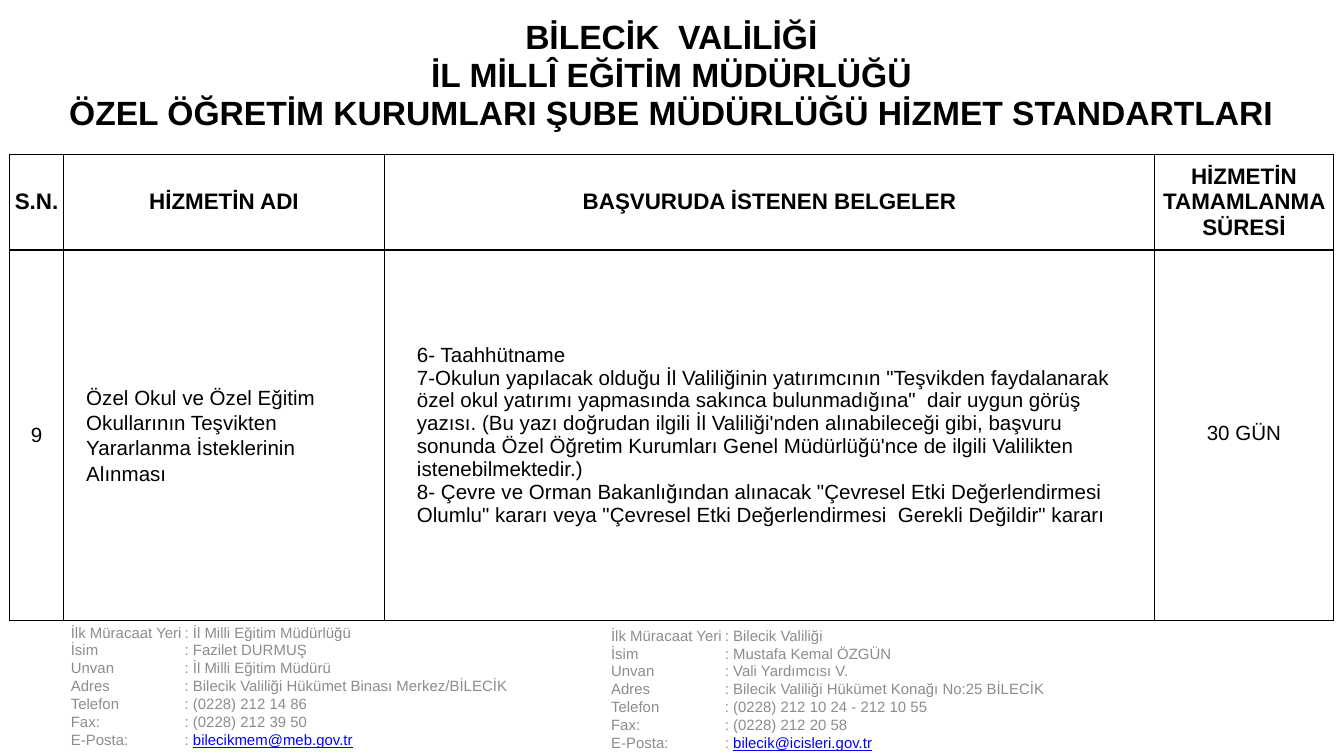
from dataclasses import dataclass

from pptx import Presentation
from pptx.dml.color import RGBColor
from pptx.enum.text import MSO_ANCHOR as Anchor, PP_ALIGN as Align
from pptx.oxml.xmlchemy import OxmlElement as Element
from pptx.util import Cm, Pt

BLACK = RGBColor(0, 0, 0)
GREY = RGBColor(0x8C, 0x8C, 0x8C)
BLUE = RGBColor(0, 0, 0xFF)
FONT = "Arial"
SIDES = ("lnL", "lnR", "lnT", "lnB")
COLS = (1.02, 6.07, 14.55, 3.38)
ROWS = (2.97, 1.8, 7.01)
LABELS = ("İlk Müracaat Yeri", "İsim", "Unvan", "Adres", "Telefon", "Fax:", "E-Posta:")


@dataclass
class Entry:
    text: str
    size: float = 11
    bold: bool = False
    align: Align = Align.CENTER
    inset: float = 0
    indent: float = 0
    spacing: float | Pt | None = None


@dataclass
class Contact:
    left: float
    top: float
    values: tuple[str, ...]
    mail: str


def head(text: str, size: float = 12) -> Entry:
    return Entry(text, size, bold=True)


def body(text: str, indent: float, spacing: float | None = None) -> Entry:
    return Entry(text, align=Align.LEFT, inset=0.25, indent=indent, spacing=spacing)


GRID = (
    (head(
        "BİLECİK  VALİLİĞİ\n"
        "İL MİLLÎ EĞİTİM MÜDÜRLÜĞÜ\n"
        "ÖZEL ÖĞRETİM KURUMLARI ŞUBE MÜDÜRLÜĞÜ HİZMET STANDARTLARI", 18),),
    (head("S.N."), head("HİZMETİN ADI"), head("BAŞVURUDA İSTENEN BELGELER"),
     head("HİZMETİN TAMAMLANMA SÜRESİ")),
    (Entry("9"),
     body("Özel Okul ve Özel Eğitim Okullarının Teşvikten Yararlanma "
          "İsteklerinin Alınması", 0.18, 1.1),
     body("6- Taahhütname\n"
          "7-Okulun yapılacak olduğu İl Valiliğinin yatırımcının \"Teşvikden "
          "faydalanarak özel okul yatırımı yapmasında sakınca bulunmadığına\"  dair "
          "uygun görüş yazısı. (Bu yazı doğrudan ilgili İl Valiliği'nden "
          "alınabileceği gibi, başvuru sonunda Özel Öğretim Kurumları Genel "
          "Müdürlüğü'nce de ilgili Valilikten istenebilmektedir.)\n"
          "8- Çevre ve Orman Bakanlığından alınacak \"Çevresel Etki Değerlendirmesi  "
          "Olumlu\" kararı veya \"Çevresel Etki Değerlendirmesi  Gerekli Değildir\" "
          "kararı", 0.36),
     Entry("30 GÜN", inset=0.25, spacing=Pt(10))),
)

CONTACTS = (
    Contact(1.09, 11.73, (
        "İl Milli Eğitim Müdürlüğü", "Fazilet DURMUŞ", "İl Milli Eğitim Müdürü",
        "Bilecik Valiliği Hükümet Binası Merkez/BİLECİK",
        "(0228) 212 14 86", "(0228) 212 39 50", ""), "bilecikmem@meb.gov.tr"),
    Contact(11.3, 11.79, (
        "Bilecik Valiliği", "Mustafa Kemal ÖZGÜN", "Vali Yardımcısı V.",
        "Bilecik Valiliği Hükümet Konağı No:25 BİLECİK",
        "(0228) 212 10 24 - 212 10 55", "(0228) 212 20 58", ""),
        "bilecik@icisleri.gov.tr"),
)


def style(run, size: float, color: RGBColor, bold: bool = False) -> None:
    font = run.font
    font.name, font.size, font.bold = FONT, Pt(size), bold
    font.color.rgb = color


def border(cell, shown: tuple[str, ...]) -> None:
    props = cell._tc.get_or_add_tcPr()
    for side in SIDES:
        line = Element(f"a:{side}")
        line.set("w", str(Pt(1)))
        if side in shown:
            fill = Element("a:solidFill")
            tint = Element("a:srgbClr")
            tint.set("val", str(BLACK))
            fill.append(tint)
        else:
            fill = Element("a:noFill")
        line.append(fill)
        props.append(line)
    cell.fill.background()


def write(cell, entry: Entry) -> None:
    cell.vertical_anchor = Anchor.MIDDLE
    cell.margin_left = cell.margin_right = Cm(entry.inset)
    cell.margin_top = cell.margin_bottom = Cm(entry.inset / 2)
    cell.text_frame.text = entry.text
    for para in cell.text_frame.paragraphs:
        para.alignment = entry.align
        para.line_spacing = entry.spacing
        if entry.indent:
            para._p.get_or_add_pPr().set("marL", str(Cm(entry.indent)))
        for run in para.runs:
            style(run, entry.size, BLACK, entry.bold)


def draw_grid(slide) -> None:
    frame = slide.shapes.add_table(
        len(ROWS), len(COLS), Cm(0.18), Cm(-0.05), Cm(sum(COLS)), Cm(sum(ROWS)))
    table = frame.table
    table.first_row = table.horz_banding = False
    for col, width in zip(table.columns, COLS):
        col.width = Cm(width)
    for row, height in zip(table.rows, ROWS):
        row.height = Cm(height)
    table.cell(0, 0).merge(table.cell(0, len(COLS) - 1))
    for index, row in enumerate(table.rows):
        for cell in row.cells:
            border(cell, SIDES if index else ("lnB",))
        for cell, entry in zip(row.cells, GRID[index]):
            write(cell, entry)


def add_tab(para, place: float) -> None:
    stops = Element("a:tabLst")
    stop = Element("a:tab")
    stop.set("pos", str(Cm(place)))
    stop.set("algn", "l")
    stops.append(stop)
    para._p.get_or_add_pPr().append(stops)


def draw_contact(slide, contact: Contact) -> None:
    box = slide.shapes.add_textbox(
        Cm(contact.left), Cm(contact.top), Cm(11.99), Cm(2.54))
    frame = box.text_frame
    frame.word_wrap = True
    frame.vertical_anchor = Anchor.BOTTOM
    frame.text = "\n".join(
        f"{label}\t: {value}" for label, value in zip(LABELS, contact.values))
    for para in frame.paragraphs:
        add_tab(para, 2.15)
        for run in para.runs:
            style(run, 8, GREY)
    mail = frame.paragraphs[-1].add_run()
    mail.text = contact.mail
    style(mail, 8, BLUE)
    mail.font.underline = True


def main() -> None:
    deck = Presentation()
    deck.slide_width, deck.slide_height = Cm(25.4), Cm(14.29)
    slide = deck.slides.add_slide(deck.slide_layouts[6])
    for contact in CONTACTS:
        draw_contact(slide, contact)
    draw_grid(slide)
    deck.save("out.pptx")


if __name__ == "__main__":
    main()
